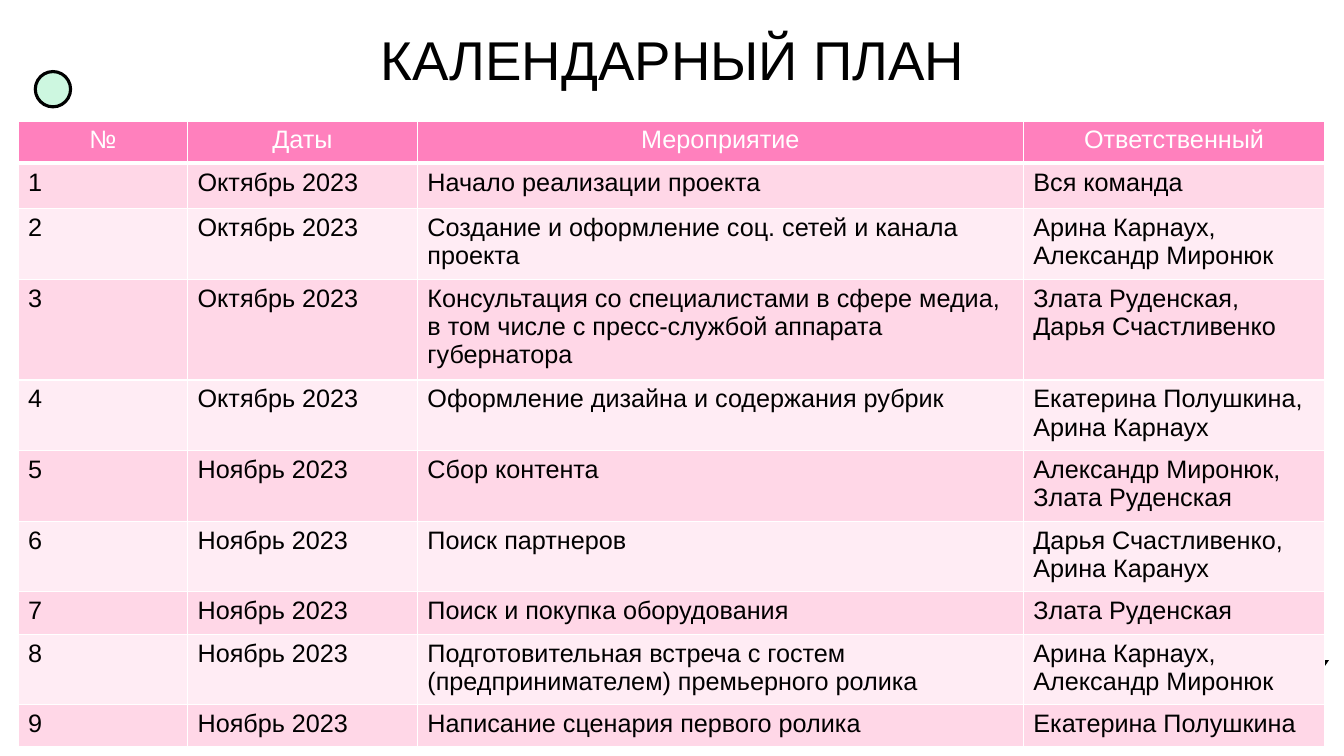
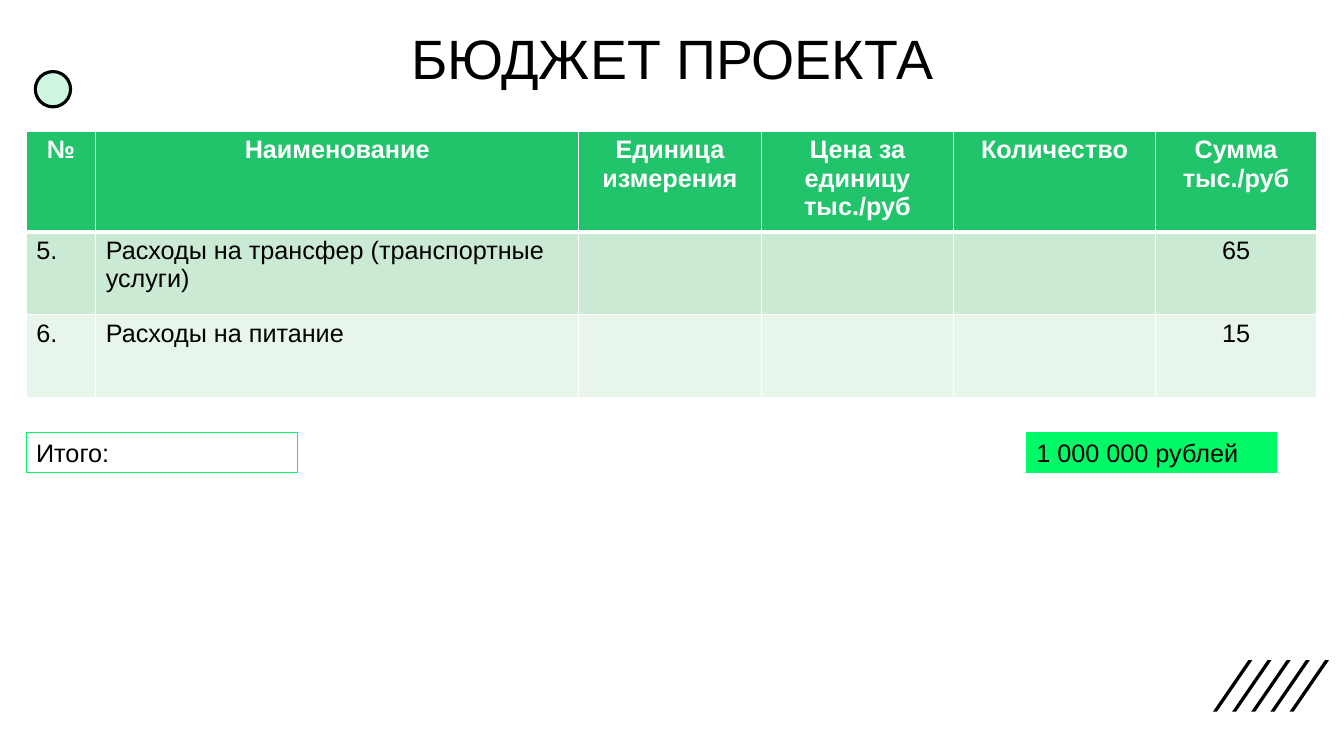
from dataclasses import dataclass

from lxml import etree
from pptx import Presentation
from pptx.dml.color import RGBColor
from pptx.enum import shapes, text
from pptx.oxml import ns
from pptx.util import Inches, Pt


@dataclass(frozen=True)
class Theme:
    font: str = "Arial"
    body_size: float = 18
    black: str = "000000"
    white: str = "FFFFFF"
    mint: str = "CDF7E0"
    accent: str = "00F967"
    thin: float = 1
    thick: float = 3
    pink: tuple = ("FF80BD", "FFD7E7", "FFECF4")  # header, odd rows, even rows
    green: tuple = ("21C46B", "CBEAD3", "E7F5EA")


THEME = Theme()
CENTER = text.PP_ALIGN.CENTER

PLAN = {
    "title": "КАЛЕНДАРНЫЙ ПЛАН",
    "title_size": 39,
    "title_box": (0.92, 0.17, 11.5, 0.9),
    "table_at": (0.18, 1.2),
    "columns": [1.68, 2.28, 6.01, 2.99],
    "row_heights": [0.42, 0.45, 0.67, 0.96, 0.67, 0.67, 0.67, 0.42, 0.67, 0.42],
    "palette": THEME.pink,
    "header_bold": False,
    "centered_columns": (),
    "rows": [
        ("№", "Даты", "Мероприятие", "Ответственный"),
        ("1", "Октябрь 2023", "Начало реализации проекта", "Вся команда"),
        ("2", "Октябрь 2023", "Создание и оформление соц. сетей и канала проекта",
         "Арина Карнаух, Александр Миронюк"),
        ("3", "Октябрь 2023",
         "Консультация со специалистами в сфере медиа, "
         "в том числе с пресс-службой аппарата губернатора",
         "Злата Руденская, Дарья Счастливенко"),
        ("4", "Октябрь 2023", "Оформление дизайна и содержания рубрик",
         "Екатерина Полушкина, Арина Карнаух"),
        ("5", "Ноябрь 2023", "Сбор контента", "Александр Миронюк, Злата Руденская"),
        ("6", "Ноябрь 2023", "Поиск партнеров", "Дарья Счастливенко, Арина Каранух"),
        ("7", "Ноябрь 2023", "Поиск и покупка оборудования", "Злата Руденская"),
        ("8", "Ноябрь 2023",
         "Подготовительная встреча с гостем (предпринимателем) премьерного ролика",
         "Арина Карнаух, Александр Миронюк"),
        ("9", "Ноябрь 2023", "Написание сценария первого ролика",
         "Екатерина Полушкина"),
    ],
    "totals": [],
}

BUDGET = {
    "title": "БЮДЖЕТ ПРОЕКТА",
    "title_size": 39.6,
    "title_box": (0.92, 0.4, 11.5, 0.42),
    "table_at": (0.26, 1.3),
    "columns": [0.69, 4.79, 1.81, 1.91, 2, 1.6],
    "row_heights": [0.94, 0.82, 0.82],
    "palette": THEME.green,
    "header_bold": True,
    "centered_columns": (5,),
    "rows": [
        ("№", "Наименование", "Единица измерения", "Цена за единицу тыс./руб",
         "Количество", "Сумма тыс./руб"),
        ("5.", "Расходы на трансфер (транспортные услуги)", "", "", "", "65"),
        ("6.", "Расходы на питание", "", "", "", "15"),
    ],
    "totals": [  # text, box, fill
        ("Итого:", (0.26, 4.29, 2.69, 0.4), None),
        ("1 000 000 рублей", (10.18, 4.29, 2.48, 0.4), THEME.accent),
    ],
}


def rgb(color):
    return RGBColor.from_string(color)


def inches(values):
    return [Inches(value) for value in values]


def write(frame, content, size=THEME.body_size, color=THEME.black, bold=False,
          align=text.PP_ALIGN.LEFT, spacing=None):
    paragraph = frame.paragraphs[0]
    paragraph.text = content
    paragraph.alignment = align
    paragraph.line_spacing = spacing
    font = paragraph.font
    font.name, font.size, font.bold = THEME.font, Pt(size), bold
    font.color.rgb = rgb(color)


def style(shape, fill=None, line=None, width=0.75):
    shape.shadow.inherit = False
    if fill:
        shape.fill.solid()
        shape.fill.fore_color.rgb = rgb(fill)
    else:
        shape.fill.background()
    if line:
        shape.line.color.rgb = rgb(line)
        shape.line.width = Pt(width)
    else:
        shape.line.fill.background()


def add_decoration(slide):
    """Five slanted strokes at the lower right and a dot at the upper left."""
    count, left, step, top, bottom = 5, 12.03, 0.19, 6.55, 7.06
    thickness, slant = 0.04, 0.35
    for index in range(count):
        x = left + index * step
        outline = [(x + thickness, bottom), (x, bottom),
                   (x + slant, top), (x + slant + thickness, top)]
        start, *others = [inches(point) for point in outline]
        builder = slide.shapes.build_freeform(*start)
        builder.add_line_segments(others, close=True)
        style(builder.convert_to_shape(), fill=THEME.black)
    dot = slide.shapes.add_shape(shapes.MSO_SHAPE.OVAL,
                                 *inches((0.35, 0.71, 0.35, 0.35)))
    style(dot, THEME.mint, THEME.black, 2.25)


def add_title(slide, content, size, box):
    frame = slide.shapes.add_textbox(*inches(box)).text_frame
    frame.word_wrap = True
    frame.vertical_anchor = text.MSO_ANCHOR.MIDDLE
    write(frame, content, size=size, align=CENTER, spacing=0.9)


def set_borders(cell, top, bottom):
    properties = cell._tc.get_or_add_tcPr()
    sides = (("L", THEME.thin), ("R", THEME.thin), ("T", top), ("B", bottom))
    for side, width in sides:
        line = etree.SubElement(properties, ns.qn(f"a:ln{side}"), w=str(Pt(width)))
        fill = etree.SubElement(line, ns.qn("a:solidFill"))
        etree.SubElement(fill, ns.qn("a:srgbClr"), val=THEME.white)


def add_table(slide, content):
    rows, columns, heights = (content[key] for key in ("rows", "columns", "row_heights"))
    size = (sum(columns), sum(heights))
    table = slide.shapes.add_table(len(rows), len(columns),
                                   *inches(content["table_at"] + size)).table
    for column, width in zip(table.columns, columns):
        column.width = Inches(width)
    header_fill, *bands = content["palette"]
    for r, (row, height) in enumerate(zip(rows, heights)):
        table.rows[r].height = Inches(height)
        header = r == 0
        for c, value in enumerate(row):
            cell = table.cell(r, c)
            set_borders(cell, top=THEME.thick if r == 1 else THEME.thin,
                        bottom=THEME.thick if header else THEME.thin)
            cell.fill.solid()
            cell.fill.fore_color.rgb = rgb(header_fill if header else bands[(r - 1) % 2])
            centered = header or c in content["centered_columns"]
            write(cell.text_frame, value,
                  color=THEME.white if header else THEME.black,
                  bold=header and content["header_bold"],
                  align=CENTER if centered else text.PP_ALIGN.LEFT)


def add_total(slide, content, box, fill):
    shape = slide.shapes.add_shape(shapes.MSO_SHAPE.RECTANGLE, *inches(box))
    style(shape, fill, THEME.accent)
    shape.text_frame.word_wrap = True
    shape.text_frame.vertical_anchor = text.MSO_ANCHOR.TOP
    write(shape.text_frame, content)


def main():
    presentation = Presentation()
    presentation.slide_width = Inches(13.33)
    presentation.slide_height = Inches(7.5)
    for content in (PLAN, BUDGET):
        slide = presentation.slides.add_slide(presentation.slide_layouts[6])
        add_decoration(slide)
        add_title(slide, content["title"], content["title_size"], content["title_box"])
        add_table(slide, content)
        for total in content["totals"]:
            add_total(slide, *total)
    presentation.save("out.pptx")


if __name__ == "__main__":
    main()
